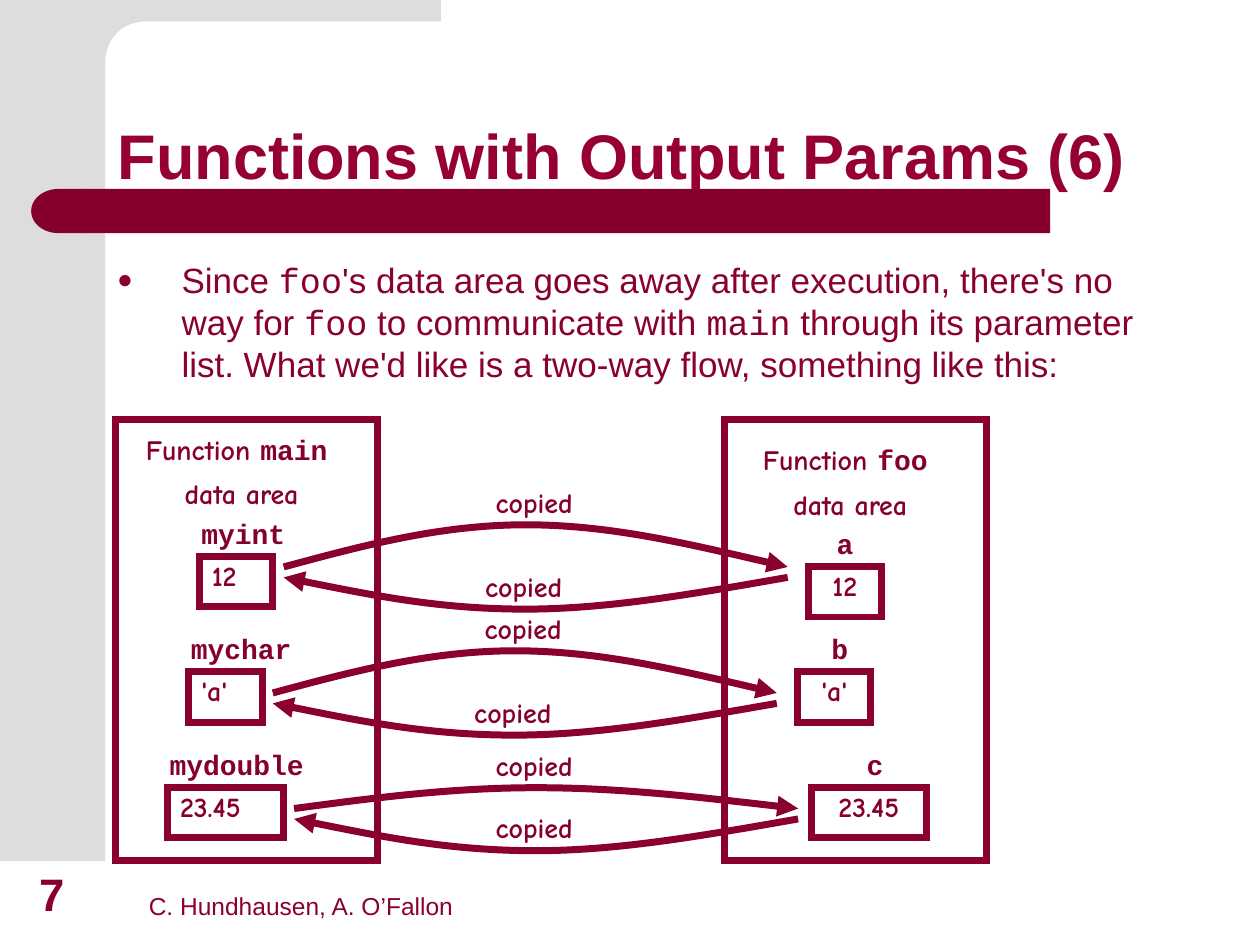
from dataclasses import dataclass

from lxml import etree
from pptx import Presentation
from pptx.dml.color import RGBColor
from pptx.enum.shapes import MSO_SHAPE
from pptx.enum.text import MSO_ANCHOR, MSO_AUTO_SIZE, PP_ALIGN
from pptx.oxml.ns import qn
from pptx.util import Cm, Pt

LEFT, CENTER = PP_ALIGN.LEFT, PP_ALIGN.CENTER
TOP, BOTTOM = MSO_ANCHOR.TOP, MSO_ANCHOR.BOTTOM
NO_AUTOFIT = MSO_AUTO_SIZE.NONE
RECT, DELAY = MSO_SHAPE.RECTANGLE, MSO_SHAPE.FLOWCHART_DELAY
TITLE_ONLY = 5


@dataclass(frozen=True)
class Theme:
    title: str = "960032"
    text: str = "8A002E"
    bar: str = "86002D"
    panel: str = "DDDDDD"
    sans: str = "Arial"
    hand: str = "Comic Neue"
    code: str = "Courier New"
    title_size: int = 36
    number_size: int = 26
    body_size: int = 20
    label_size: int = 16
    footer_size: int = 14
    line: int = 4


T = Theme()


def write(p, text, *, font=T.sans, size=T.label_size, color=T.bar, bold=False):
    r = p.add_run()
    r.text = text
    r.font.name, r.font.size, r.font.bold = font, Pt(size), bold
    r.font.color.rgb = RGBColor.from_string(color)


def set_frame(tf, anchor=TOP):
    tf.word_wrap = True
    tf.auto_size = NO_AUTOFIT
    tf.vertical_anchor = anchor
    return tf.paragraphs[0]


def add_text(s, box, text, *, align=LEFT, anchor=TOP, spacing=None, **fmt):
    sp = s.shapes.add_textbox(*map(Cm, box))
    p = set_frame(sp.text_frame, anchor)
    p.alignment, p.line_spacing = align, spacing
    write(p, text, **fmt)
    return sp


def add_label(s, box, text, font=T.hand, align=LEFT):
    return add_text(s, box, text, font=font, align=align, spacing=0.9, bold=True)


def fill_only(sp, color):
    sp.shadow.inherit = False
    sp.fill.solid()
    sp.fill.fore_color.rgb = RGBColor.from_string(color)
    sp.line.fill.background()


def outline_only(sp):
    sp.shadow.inherit = False
    sp.fill.background()
    sp.line.width = Pt(T.line)
    sp.line.color.rgb = RGBColor.from_string(T.text)
    ln = sp.line._get_or_add_ln()
    etree.SubElement(ln, qn("a:miter"), lim="800000")
    return ln


def add_box(s, box):
    sp = s.shapes.add_shape(RECT, *map(Cm, box))
    outline_only(sp)
    return sp


def add_freeform(s, points, curves, close):
    """Outline through points; curves maps a segment to its two control points."""
    emu = [(Cm(x), Cm(y)) for x, y in points]
    builder = s.shapes.build_freeform(*emu[0])
    builder.add_line_segments(emu[1:], close=close)
    sp = builder.convert_to_shape()
    segments = list(sp._element.iter(qn("a:lnTo")))
    for i, controls in curves.items():
        segment = segments[i]
        curve = etree.Element(qn("a:cubicBezTo"))
        for x, y in controls:
            etree.SubElement(curve, qn("a:pt"), x=str(Cm(x) - sp.left), y=str(Cm(y) - sp.top))
        curve.append(segment[0])
        segment.getparent().replace(segment, curve)
    return sp


def add_backdrop(s, box):
    """Grey side panel with a rounded inner corner, and the title bar."""
    x, y, w, h = box
    fill_only(s.shapes.add_shape(RECT, *map(Cm, box)), T.panel)
    edge, top = x + w, y + 0.43
    outline = [(x + 1.27, y), (x + 8.89, y), (x + 8.89, top), (edge + 0.84, top),
               (edge, top + 0.84), (edge, y + 1.55), (x + 1.27, y + 1.55)]
    corner = {3: ((edge + 0.35, top), (edge, top + 0.35))}
    fill_only(add_freeform(s, outline, corner, close=True), T.panel)

    fill_only(s.shapes.add_shape(RECT, Cm(x + 1.69), Cm(y + 3.81), Cm(19.48), Cm(0.89)), T.bar)
    cap = s.shapes.add_shape(DELAY, Cm(x + 0.63), Cm(y + 3.81), Cm(1.09), Cm(0.89))
    cap._element.spPr.find(qn("a:xfrm")).set("flipH", "1")
    fill_only(cap, T.bar)


def add_title(s, box, text):
    sp = s.shapes.title
    sp.left, sp.top, sp.width, sp.height = map(Cm, box)
    geometry = etree.SubElement(sp._element.spPr, qn("a:prstGeom"), prst="roundRect")
    guides = etree.SubElement(geometry, qn("a:avLst"))
    etree.SubElement(guides, qn("a:gd"), name="adj", fmla="val 21700")
    p = set_frame(sp.text_frame, BOTTOM)
    p.alignment, p.line_spacing = LEFT, 0.9
    write(p, text, size=T.title_size, color=T.title, bold=True)


def add_bullet(s, box, parts):
    """One bulleted paragraph; every second part is code."""
    sp = s.shapes.add_textbox(*map(Cm, box))
    p = set_frame(sp.text_frame)
    pPr = p._p.get_or_add_pPr()
    pPr.set("marL", str(Cm(1.3)))
    pPr.set("indent", str(-Cm(1.3)))
    color = etree.SubElement(pPr, qn("a:buClr"))
    etree.SubElement(color, qn("a:srgbClr"), val=T.text)
    etree.SubElement(pPr, qn("a:buSzPct"), val="75000")
    etree.SubElement(pPr, qn("a:buFont"), typeface=T.sans)
    etree.SubElement(pPr, qn("a:buChar"), char="●")
    for i, part in enumerate(parts):
        write(p, part, font=T.code if i % 2 else T.sans, size=T.body_size, color=T.text)


def add_data_area(s, box, name, head_dy, variables, align):
    """Frame of one function with its named values."""
    x, y, _, _ = box
    head = add_label(s, (x + 0.21, y + head_dy, 4.66, 1.83), "Function ", align=CENTER)
    tf = head.text_frame
    write(tf.paragraphs[0], name, font=T.code, bold=True)
    write(tf.paragraphs[0], " ", font=T.hand, bold=True)
    p = tf.add_paragraph()
    p.alignment, p.line_spacing, p.space_before = CENTER, 0.9, Pt(T.label_size / 2)
    write(p, "data area", font=T.hand, bold=True)
    add_box(s, box)

    for var, value, dx, dy, w, name_dx, name_w in variables:
        left, top = x + dx, y + dy
        sp = add_box(s, (left, top, w, 1.02))
        p = set_frame(sp.text_frame)
        p.alignment, p.line_spacing = align, 0.9
        write(p, value, font=T.hand, bold=True)
        add_label(s, (left + name_dx, top - 0.85, name_w, 0.86), var, T.code, align)


def add_arc(s, x, y, w, bend, end):
    """Arrow curving by bend at its middle; end is headEnd or tailEnd."""
    half, full = y + bend / 2, y + bend
    points = [(x, y), (x + 0.48 * w, full), (x + w, y)]
    curves = {0: ((x + 0.155 * w, half), (x + 0.31 * w, full)),
              1: ((x + 0.645 * w, full), (x + 0.82 * w, half))}
    ln = outline_only(add_freeform(s, points, curves, close=False))
    etree.SubElement(ln, qn("a:" + end), type="triangle")


def add_flow(s, x, y, w, rise, label_dx):
    """Copy out along the upper arc and back along the lower one."""
    add_label(s, (x + label_dx, y - rise - 0.84, 3.18, 0.86), "copied")
    add_label(s, (x + 3.81, y, 3.18, 0.86), "copied")
    add_arc(s, x, y, w, -rise, "tailEnd")
    add_arc(s, x, y + 0.21, w, 0.64, "headEnd")


def add_footer(s, box, number, authors):
    x, y, w, h = box
    add_text(s, (x + 2.52, y, w - 2.52, h), authors, anchor=BOTTOM,
             size=T.footer_size, color=T.text)
    add_text(s, (x, y, 1.63, h), number, align=CENTER, anchor=BOTTOM,
             size=T.number_size, color=T.text, bold=True)


def main():
    prs = Presentation()
    prs.slide_width, prs.slide_height = Cm(25.4), Cm(19.05)
    s = prs.slides.add_slide(prs.slide_layouts[TITLE_ONLY])

    add_backdrop(s, (0, 0, 2.12, 17.36))
    add_title(s, (2.12, 0.85, 22.01, 3.18), "Functions with Output Params (6)")
    add_bullet(s, (2.11, 5.08, 21.36, 10.34), (
        "Since ", "foo", "'s data area goes away after execution, there's no way for ",
        "foo", " to communicate with ", "main",
        " through its parameter list. What we'd like is a two-way flow, "
        "something like this:"))

    # Variables: name, value, offset in the area, width, name offset and width
    add_data_area(s, (2.33, 8.46, 5.29, 8.89), "main", 0.21, (
        ("myint", "12", 1.69, 2.75, 1.48, -0.21, 2.54),
        ("mychar", "'a'", 1.48, 5.08, 1.48, -0.21, 2.96),
        ("mydouble", "23.45", 1.05, 7.41, 2.33, -0.21, 3.81)), LEFT)
    add_data_area(s, (14.6, 8.46, 5.29, 8.89), "foo", 0.42, (
        ("a", "12", 1.69, 2.96, 1.48, -0.21, 1.91),
        ("b", "'a'", 1.48, 5.08, 1.48, -0.21, 2.12),
        ("c", "23.45", 1.75, 7.41, 2.33, 0.23, 2.12)), CENTER)

    # Flows: left, start height, rise, offset of the upper label
    for x, y, rise, label_dx in ((5.72, 11.43, 0.85, 4.02),
                                 (5.5, 13.97, 0.85, 4.02),
                                 (5.93, 16.3, 0.42, 3.81)):
        add_flow(s, x, y, 10.16, rise, label_dx)

    add_footer(s, (0.23, 17.36, 12.04, 1.33), "7", "C. Hundhausen, A. O’Fallon")
    prs.save("out.pptx")


if __name__ == "__main__":
    main()
